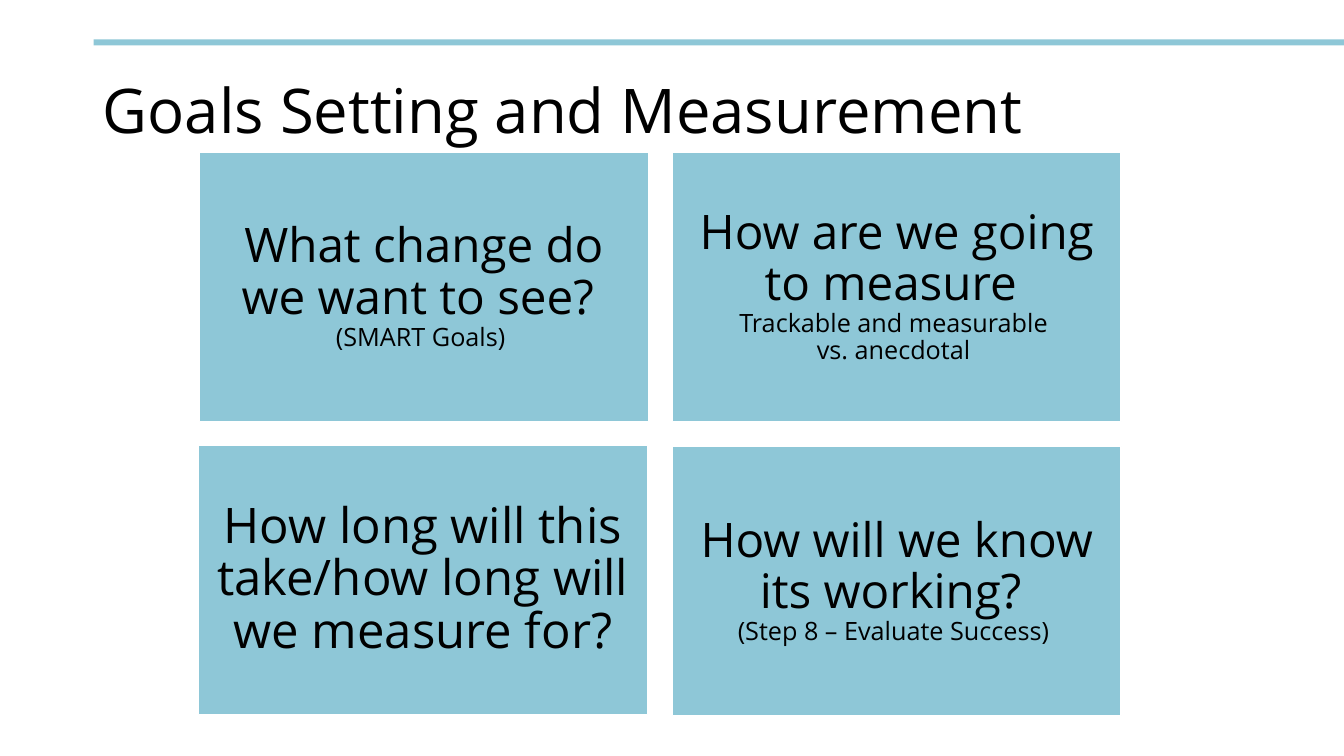
from dataclasses import dataclass

from pptx import Presentation
from pptx import util as u
from pptx.dml.color import RGBColor
from pptx.enum import shapes, text


@dataclass(frozen=True)
class Theme:
    font: str = "Open Sans"
    ink: RGBColor = RGBColor(0x00, 0x00, 0x00)
    blue: RGBColor = RGBColor(0x8E, 0xC7, 0xD7)
    white: RGBColor = RGBColor(0xFF, 0xFF, 0xFF)
    title: int = 44
    question: int = 34
    long_question: int = 35
    note: int = 18


theme = Theme()


def write(box, lines, align=text.PP_ALIGN.CENTER, inset=0.14):
    """Fill a box with one paragraph of (wording, size) lines."""
    frame = box.text_frame
    frame.word_wrap = True
    frame.auto_size = text.MSO_AUTO_SIZE.NONE
    frame.vertical_anchor = text.MSO_ANCHOR.MIDDLE
    frame.margin_left = frame.margin_right = u.Inches(inset)
    frame.margin_top = frame.margin_bottom = u.Inches(inset)
    para = frame.paragraphs[0]
    para.alignment = align
    para.line_spacing = 0.9
    for number, (wording, size) in enumerate(lines):
        if number:
            para.add_line_break()
        span = para.add_run()
        span.text = wording
        span.font.name = theme.font
        span.font.size = u.Pt(size)
        span.font.color.rgb = theme.ink


def add_block(page, left, top, width, height):
    """Add a plain blue rectangle without outline or shadow."""
    block = page.shapes.add_shape(
        shapes.MSO_SHAPE.RECTANGLE,
        u.Inches(left), u.Inches(top), u.Inches(width), u.Inches(height))
    block.shadow.inherit = False
    block.fill.solid()
    block.fill.fore_color.rgb = theme.blue
    block.line.fill.background()
    return block


deck = Presentation()
deck.slide_width, deck.slide_height = u.Inches(13.33), u.Inches(7.5)
page = deck.slides.add_slide(deck.slide_layouts[5])

# Rule along the top
add_block(page, 0.93, 0.39, 12.4, 0.06)

# Title
title = page.shapes.title
title.left, title.top = u.Inches(0.92), u.Inches(0.4)
title.width, title.height = u.Inches(11.5), u.Inches(1.45)
write(title, [("Goals Setting and Measurement", theme.title)],
      align=text.PP_ALIGN.LEFT, inset=0.1)

# Four question cards: left, top, lines
cards = [
    (1.98, 1.51, [("What change do we want to see? ", theme.question),
                  ("(SMART Goals) ", theme.note)]),
    (6.67, 1.51, [("How are we going to measure ", theme.question),
                  ("Trackable and measurable ", theme.note),
                  ("vs. anecdotal ", theme.note)]),
    (1.97, 4.42, [("How long will this take/how long will we measure for?",
                   theme.long_question)]),
    (6.67, 4.43, [("How will we know its working? ", theme.question),
                  ("(Step 8 – Evaluate Success) ", theme.note)]),
]
for left, top, lines in cards:
    card = add_block(page, left, top, 4.45, 2.67)
    card.line.color.rgb = theme.white
    card.line.width = u.Pt(1)
    write(card, lines)

deck.save("out.pptx")
